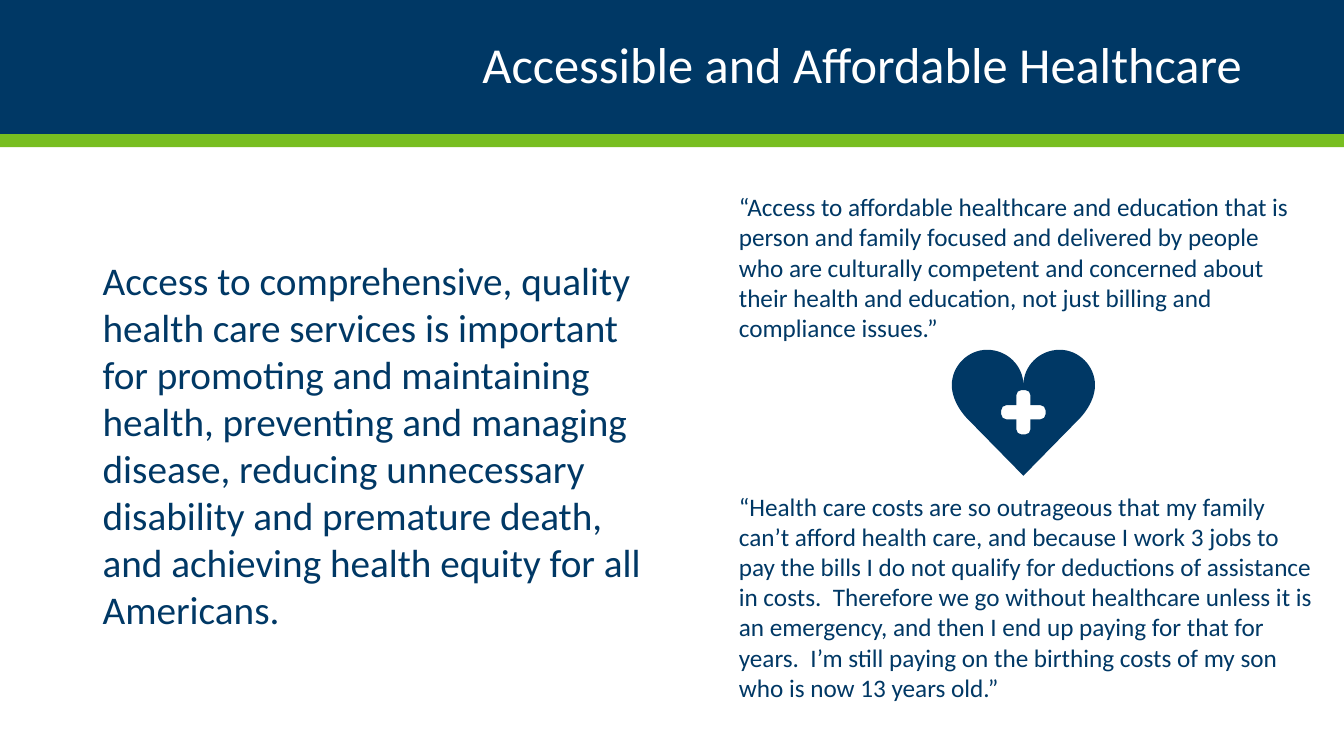
from pptx import Presentation
from pptx.dml.color import RGBColor
from pptx.enum import shapes, text
from pptx.oxml import ns, xmlchemy
from pptx.util import Inches, Pt

NAVY = RGBColor(0x00, 0x38, 0x65)
GREEN = RGBColor(0x78, 0xBE, 0x21)
WHITE = RGBColor(0xFF, 0xFF, 0xFF)
FONT = "Calibri"
WIDTH, HEIGHT = 13.33, 7.5

TITLE = "Accessible and Affordable Healthcare"
BANDS = [(0, 1.33, NAVY), (1.33, 0.13, GREEN)]
SUMMARY = (
    "Access to comprehensive, quality health care services is important for "
    "promoting and maintaining health, preventing and managing disease, reducing "
    "unnecessary disability and premature death, and achieving health equity for "
    "all Americans.")
QUOTES = [
    ("“Access to affordable healthcare and education that is person and family "
     "focused and delivered by people who are culturally competent and concerned "
     "about their health and education, not just billing and compliance issues.”",
     (7.23, 1.85, 5.83, 1.62)),
    ("“Health care costs are so outrageous that my family can’t afford health care, "
     "and because I work 3 jobs to pay the bills I do not qualify for deductions of "
     "assistance in costs.  Therefore we go without healthcare unless it is an "
     "emergency, and then I end up paying for that for years.  I’m still paying on "
     "the birthing costs of my son who is now 13 years old.”",
     (7.23, 4.82, 5.93, 2.22)),
]

HEART_X, HEART_TOP = 10.15, 3.47
LOBE = [(0, 0.35), (0, 0.16), (0.16, 0), (0.36, 0), (0.55, 0), (0.71, 0.16),
        (0.71, 0.35), (0.71, 0.55), (0.53, 0.71), (0.53, 0.71)]
HEART_TIP = (0, 1.25)
CROSS_Y = 4.09
ARM_HALF, ARM_LENGTH, ARM_RADIUS = 0.07, 0.22, 0.05


def heart_points():
    left = [(-x, y) for x, y in reversed(LOBE)]
    points = LOBE + [HEART_TIP] * 3 + left[:1] * 3 + left[1:]
    return [(HEART_X + x, HEART_TOP + y) for x, y in points]


def cross_points():
    inner, outer = ARM_HALF - ARM_RADIUS, ARM_LENGTH - ARM_RADIUS
    bend = 0.55 * ARM_RADIUS
    corner = [(ARM_HALF, -outer), (ARM_HALF, -outer - bend),
              (inner + bend, -ARM_LENGTH), (inner, -ARM_LENGTH)]
    mirrored = [(-x, y) for x, y in reversed(corner)]
    arm = (corner[:1] * 3 + corner[1:] + mirrored[:1] * 3 + mirrored[1:]
           + [(-ARM_HALF, -ARM_HALF)] * 3)
    points = [(ARM_HALF, -ARM_HALF)]
    for _ in range(4):
        points += arm
        arm = [(y, -x) for x, y in arm]
    return [(HEART_X + x, CROSS_Y + y) for x, y in points]


def paint(sp, color):
    sp.shadow.inherit = False
    sp.fill.solid()
    sp.fill.fore_color.rgb = color
    sp.line.fill.background()


def write(sp, words, size, color, fit=text.MSO_AUTO_SIZE.NONE):
    tf = sp.text_frame
    tf.word_wrap = True
    tf.auto_size = fit
    tf.text = words
    p = tf.paragraphs[0]
    p.font.name, p.font.size, p.font.color.rgb = FONT, Pt(size), color
    return tf, p


def add_title(s):
    sp = s.shapes.title
    sp.left, sp.top, sp.width, sp.height = map(Inches, (0.92, 0.17, 11.5, 1))
    tf, p = write(sp, TITLE, 36, WHITE)
    tf.vertical_anchor = text.MSO_ANCHOR.MIDDLE
    p.alignment = text.PP_ALIGN.RIGHT
    p.line_spacing = 0.9
    s.shapes.element.append(sp.element)


def add_summary(s):
    sp = s.shapes.add_textbox(*map(Inches, (0.92, 1.74, 5.67, 5.01)))
    sp.fill.solid()
    sp.fill.fore_color.rgb = WHITE
    tf, p = write(sp, SUMMARY, 28, NAVY)
    tf.margin_top = Inches(0.8)


def curve_segments(sp):
    lines = list(sp.element.iter(ns.qn("a:lnTo")))
    for i in range(0, len(lines), 3):
        curve = xmlchemy.OxmlElement("a:cubicBezTo")
        lines[i].addprevious(curve)
        for line in lines[i:i + 3]:
            curve.append(line[0])
            line.getparent().remove(line)


def add_heart(s):
    heart, cross = ([(Inches(x), Inches(y)) for x, y in points]
                    for points in (heart_points(), cross_points()))
    builder = s.shapes.build_freeform(*heart[0])
    builder.add_line_segments(heart[1:], close=True)
    builder.move_to(*cross[0])
    builder.add_line_segments(cross[1:], close=True)
    sp = builder.convert_to_shape()
    curve_segments(sp)
    paint(sp, NAVY)
    return sp


def main():
    """Build the healthcare slide with its title band, quotes and heart."""
    prs = Presentation()
    prs.slide_width, prs.slide_height = Inches(WIDTH), Inches(HEIGHT)
    s = prs.slides.add_slide(prs.slide_layouts[5])
    for top, height, color in BANDS:
        box = map(Inches, (0, top, WIDTH, height))
        paint(s.shapes.add_shape(shapes.MSO_SHAPE.RECTANGLE, *box), color)
    add_title(s)
    add_summary(s)
    for words, box in QUOTES:
        sp = s.shapes.add_textbox(*map(Inches, box))
        write(sp, words, 18, NAVY, text.MSO_AUTO_SIZE.SHAPE_TO_FIT_TEXT)
    sp.element.addprevious(add_heart(s).element)
    prs.save("out.pptx")


if __name__ == "__main__":
    main()
